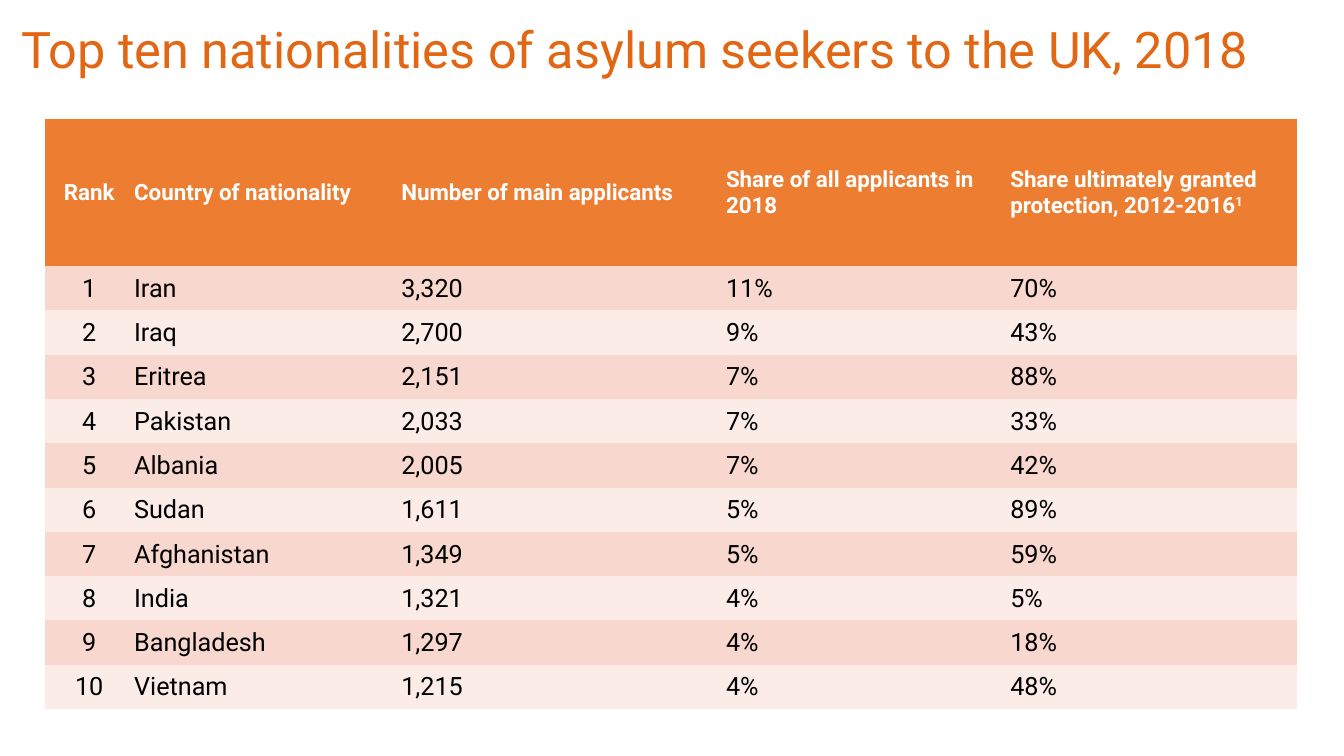
from pptx import Presentation
from pptx.dml.color import RGBColor
from pptx.enum.text import MSO_ANCHOR, PP_ALIGN
from pptx.util import Inches, Pt

MID = MSO_ANCHOR.MIDDLE
LEFT, CENTER = PP_ALIGN.LEFT, PP_ALIGN.CENTER
FONT = "Roboto"
PLAIN = "{2D5ABB26-0587-4C30-8999-92F81FD0307C}"
HUES = {
    "title": "E26714",
    "head": "ED7D31",
    "odd": "F8D7CE",
    "even": "FCECE8",
    "white": "FFFFFF",
    "black": "000000",
}
COLS = [6.53, 19.88, 24.16, 21.15, 21.38]
HEAD = [
    "Rank",
    "Country of nationality",
    "Number of main applicants",
    "Share of all applicants in 2018",
    "Share ultimately granted protection, 2012-2016",
]
DATA = [
    ("Iran", "3,320", "11%", "70%"),
    ("Iraq", "2,700", "9%", "43%"),
    ("Eritrea", "2,151", "7%", "88%"),
    ("Pakistan", "2,033", "7%", "33%"),
    ("Albania", "2,005", "7%", "42%"),
    ("Sudan", "1,611", "5%", "89%"),
    ("Afghanistan", "1,349", "5%", "59%"),
    ("India", "1,321", "4%", "5%"),
    ("Bangladesh", "1,297", "4%", "18%"),
    ("Vietnam", "1,215", "4%", "48%"),
]


class Deck:
    """Hold the style and current slide, with lengths in percent of its size."""

    def __init__(self):
        self.prs = Presentation()
        self.prs.slide_width = Inches(13.33)
        self.prs.slide_height = Inches(7.5)
        self.slide = self.prs.slides.add_slide(self.prs.slide_layouts[6])

    def wide(self, part):
        return round(self.prs.slide_width * part / 100)

    def high(self, part):
        return round(self.prs.slide_height * part / 100)

    def style(self, para, size, hue, bold=False, align=LEFT):
        para.alignment = align
        for run in para.runs:
            run.font.name = FONT
            run.font.size = Pt(size)
            run.font.bold = bold
            run.font.color.rgb = RGBColor.from_string(HUES[hue])

    def title(self, text, x, y, w, h):
        box = self.slide.shapes.add_textbox(
            self.wide(x), self.high(y), self.wide(w), self.high(h))
        frame = box.text_frame
        frame.word_wrap = True
        frame.vertical_anchor = MID
        frame.text = text
        para = frame.paragraphs[0]
        para.line_spacing = 0.9
        self.style(para, 36, "title")

    def cell(self, cell, text, fill, note="", **look):
        cell.margin_left = cell.margin_right = cell.margin_top = Inches(0.01)
        cell.margin_bottom = 0
        cell.vertical_anchor = MID
        cell.fill.solid()
        cell.fill.fore_color.rgb = RGBColor.from_string(HUES[fill])
        para = cell.text_frame.paragraphs[0]
        para.text = text
        if note:
            mark = para.add_run()
            mark.text = note
            mark._r.get_or_add_rPr().set("baseline", "30000")
        self.style(para, **look)

    def table(self, head, data, note, x, y, cols, top, row):
        high = top + row * len(data)
        shape = self.slide.shapes.add_table(
            len(data) + 1, len(cols), self.wide(x), self.high(y),
            self.wide(sum(cols)), self.high(high))
        grid = shape.table
        grid.first_row = grid.horz_banding = False
        for tag in shape.element.iter("{*}tableStyleId"):
            tag.text = PLAIN
        for col, part in zip(grid.columns, cols):
            col.width = self.wide(part)
        for r, line in enumerate([head, *data]):
            grid.rows[r].height = self.high(row if r else top)
            if r:
                fill = "odd" if r % 2 else "even"
                look = {"size": 18, "hue": "black"}
            else:
                fill = "head"
                look = {"size": 16, "hue": "white", "bold": True}
            for c, text in enumerate(line):
                mark = note if r == 0 and c == len(cols) - 1 else ""
                self.cell(grid.cell(r, c), text, fill, mark,
                          align=LEFT if c else CENTER, **look)


def main():
    deck = Deck()
    deck.title("Top ten nationalities of asylum seekers to the UK, 2018",
               0.83, 1.07, 97.22, 11.73)
    ranks = [(str(i), *line) for i, line in enumerate(DATA, 1)]
    deck.table(HEAD, ranks, "1", 3.38, 15.73, COLS, 19.47, 5.86)
    deck.prs.save("out.pptx")


if __name__ == "__main__":
    main()
